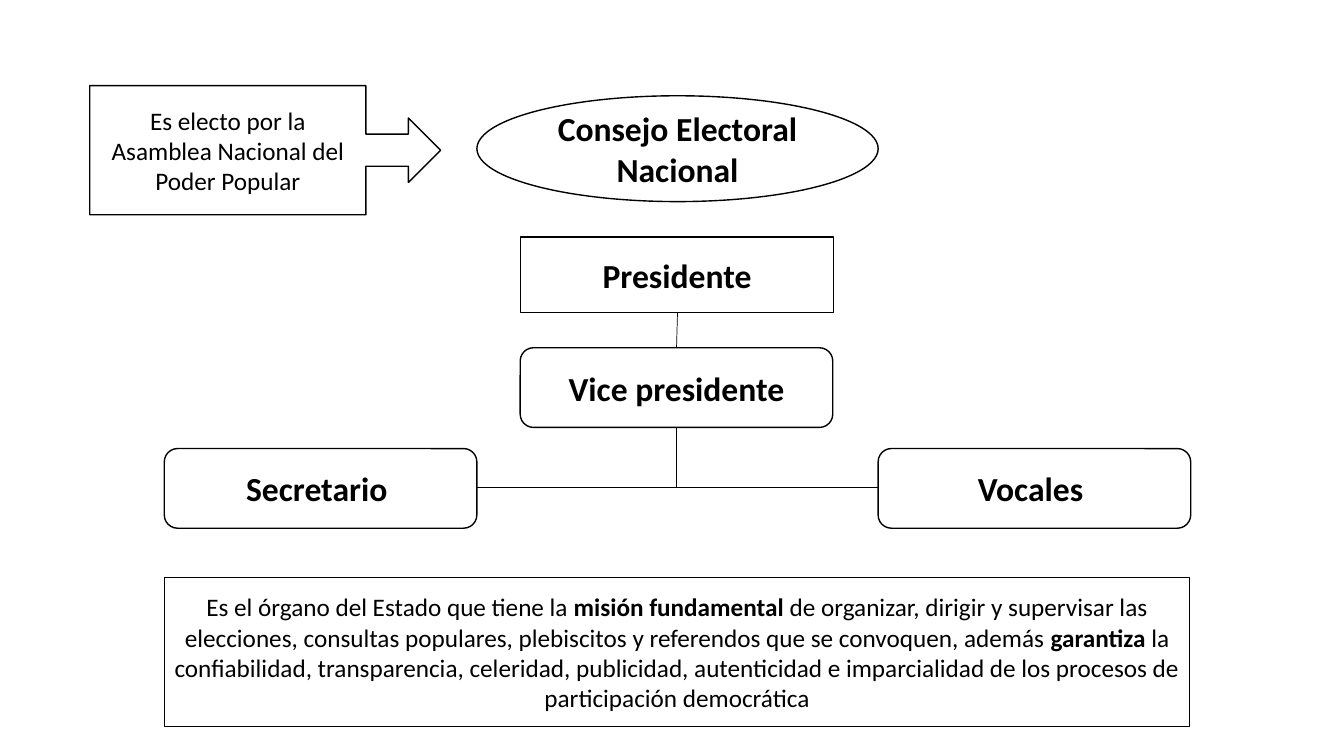
from dataclasses import dataclass

import pptx
import pptx.dml.color
import pptx.enum.shapes
import pptx.enum.text
import pptx.oxml.ns
import pptx.util
from lxml import etree

EMU_PER_PX = 9144  # 100 px to the inch
COLOURS = {"paper": "FFFFFF", "ink": "000000"}
FONT = "Calibri"
Kind = pptx.enum.shapes.MSO_SHAPE


@dataclass(frozen=True)
class Node:
    kind: Kind
    left: int
    top: int
    width: int
    height: int
    text: str
    size: int = 24
    bold: bool = True
    adjustments: tuple[float, ...] = ()


@dataclass(frozen=True)
class Link:
    x1: int
    y1: int
    x2: int
    y2: int


# Organisation chart; ** marks a switch of weight in running text
ROLE_WIDTH, ROLE_HEIGHT = 310, 79
LEFT_EDGE, MIDDLE, RIGHT_ROLE = 163, 671, 871
ROLE_TOP, MEMBER_TOP = 345, 445
MEMBER_MIDDLE = 484

NODES = [
    Node(Kind.OVAL, 473, 95, 398, 105, "Consejo Electoral Nacional"),
    Node(Kind.RECTANGLE, 516, 235, 311, 75, "Presidente"),
    *(Node(Kind.ROUNDED_RECTANGLE, left, top, ROLE_WIDTH, ROLE_HEIGHT, text)
      for left, top, text in [
          (516, ROLE_TOP, "Vice presidente"),
          (LEFT_EDGE, MEMBER_TOP, "Secretario "),
          (RIGHT_ROLE, MEMBER_TOP, "Vocales "),
      ]),
    Node(Kind.RECTANGLE, LEFT_EDGE, 573, 1017, 148,
         "Es el órgano del Estado que tiene la **misión fundamental **de organizar, "
         "dirigir y supervisar las elecciones, consultas populares, plebiscitos y "
         "referendos que se convoquen, además **garantiza** la confiabilidad, "
         "transparencia, celeridad, publicidad, autenticidad e imparcialidad de los "
         "procesos de participación democrática", 18, False),
    Node(Kind.RIGHT_ARROW_CALLOUT, 89, 85, 348, 128,
         "Es electo por la Asamblea Nacional del Poder Popular", 18, False,
         (0.25, 0.25, 0.25, 0.787)),
]

LINKS = [
    Link(672, 310, MIDDLE, ROLE_TOP),
    Link(LEFT_EDGE + ROLE_WIDTH, MEMBER_MIDDLE, RIGHT_ROLE, MEMBER_MIDDLE),
    Link(MIDDLE, ROLE_TOP + ROLE_HEIGHT, MIDDLE, MEMBER_MIDDLE),
]


def px(*lengths: int) -> list[pptx.util.Emu]:
    return [pptx.util.Emu(length * EMU_PER_PX) for length in lengths]


def colour(name: str) -> pptx.dml.color.RGBColor:
    return pptx.dml.color.RGBColor.from_string(COLOURS[name])


def set_line(line, width: float) -> None:
    line.color.rgb = colour("ink")
    line.width = pptx.util.Pt(width)


def write_text(para, text: str, *, size: int, bold: bool) -> None:
    para.alignment = pptx.enum.text.PP_ALIGN.CENTER
    for index, piece in enumerate(text.split("**")):
        span = para.add_run()
        span.text = piece
        span.font.name = FONT
        span.font.size = pptx.util.Pt(size)
        span.font.bold = bold or index % 2 == 1
        span.font.color.rgb = colour("ink")


def draw_node(page, node: Node) -> None:
    box = page.shapes.add_shape(
        node.kind, *px(node.left, node.top, node.width, node.height))
    for index, value in enumerate(node.adjustments):
        box.adjustments[index] = value
    box.shadow.inherit = False
    box.fill.solid()
    box.fill.fore_color.rgb = colour("paper")
    set_line(box.line, 1)
    box.text_frame.word_wrap = True
    box.text_frame.vertical_anchor = pptx.enum.text.MSO_ANCHOR.MIDDLE
    write_text(box.text_frame.paragraphs[0], node.text,
               size=node.size, bold=node.bold)


def draw_link(page, link: Link) -> None:
    connector = page.shapes.add_connector(
        pptx.enum.shapes.MSO_CONNECTOR.STRAIGHT,
        *px(link.x1, link.y1, link.x2, link.y2))
    set_line(connector.line, 0.5)
    etree.SubElement(connector._element.spPr, pptx.oxml.ns.qn("a:effectLst"))


def main() -> None:
    deck = pptx.Presentation()
    deck.slide_width, deck.slide_height = px(1333, 750)
    page = deck.slides.add_slide(deck.slide_layouts[6])
    for node in NODES:
        draw_node(page, node)
    for link in LINKS:
        draw_link(page, link)
    deck.save("out.pptx")


if __name__ == "__main__":
    main()
